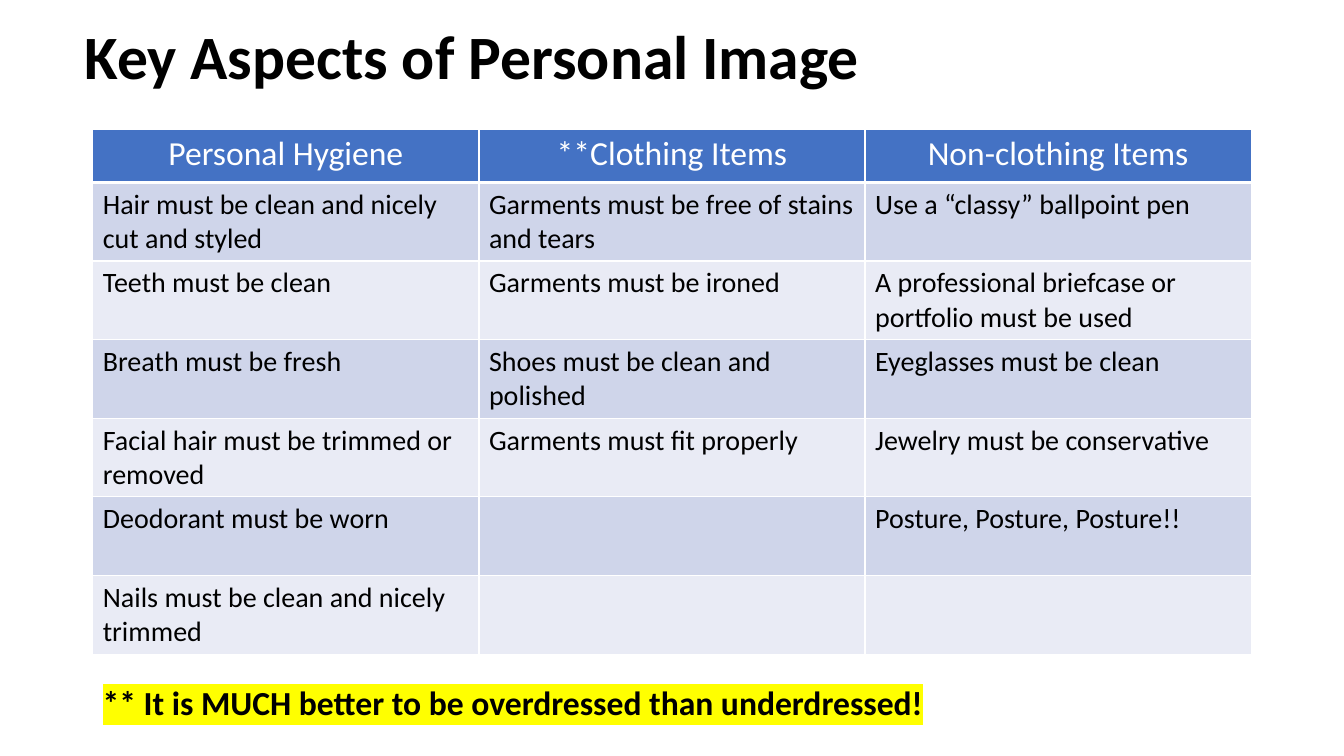
from dataclasses import dataclass

from lxml import etree
from pptx import Presentation
from pptx import util as u
from pptx.dml.color import RGBColor
from pptx.enum import text
from pptx.oxml import ns


@dataclass(frozen=True)
class Theme:
    font: str = "Calibri"
    ink: str = "000000"
    paper: str = "FFFFFF"
    header: str = "4472C4"
    bands: tuple = ("CFD5EA", "E9EBF5")
    marker: str = "FFFF00"
    title_size: int = 44
    heading_size: int = 24
    body_size: int = 20
    rule: int = 1
    header_rule: int = 3


THEME = Theme()
SLIDE_W, SLIDE_H = u.Inches(13.33), u.Inches(7.5)
MARGIN = u.Inches(0.92)
COLUMN_W = u.Inches(3.83)
HEADER_H, ROW_H = u.Inches(0.53), u.Inches(0.78)

ASPECTS = [
    ("Personal Hygiene", "**Clothing Items", "Non-clothing Items"),
    ("Hair must be clean and nicely cut and styled",
     "Garments must be free of stains and tears",
     "Use a “classy” ballpoint pen"),
    ("Teeth must be clean", "Garments must be ironed",
     "A professional briefcase or portfolio must be used"),
    ("Breath must be fresh", "Shoes must be clean and polished",
     "Eyeglasses must be clean"),
    ("Facial hair must be trimmed or removed", "Garments must fit properly",
     "Jewelry must be conservative"),
    ("Deodorant must be worn", "", "Posture, Posture, Posture!!"),
    ("Nails must be clean and nicely trimmed", "", ""),
]


def style(paragraph, size, color, bold=False):
    font = paragraph.font
    font.name, font.size, font.bold = THEME.font, u.Pt(size), bold
    font.color.rgb = RGBColor.from_string(color)


def add_solid(parent, tag, color):
    """Append a DrawingML element that wraps one RGB colour."""
    holder = etree.SubElement(parent, ns.qn(tag))
    etree.SubElement(holder, ns.qn("a:srgbClr"), val=color)


def add_line(slide, wording, box, size, anchor):
    """Add one bold line of text and return its paragraph."""
    frame = slide.shapes.add_textbox(*box).text_frame
    frame.word_wrap = True
    frame.vertical_anchor = anchor
    paragraph = frame.paragraphs[0]
    paragraph.text = wording
    style(paragraph, size, THEME.ink, bold=True)
    return paragraph


def highlight(paragraph):
    for run in paragraph.runs:
        add_solid(run._r.get_or_add_rPr(), "a:highlight", THEME.marker)


def set_borders(cell, row):
    """Draw white rules, with a heavier one below the header row."""
    widths = {"L": THEME.rule, "R": THEME.rule,
              "T": THEME.header_rule if row == 1 else THEME.rule,
              "B": THEME.header_rule if row == 0 else THEME.rule}
    properties = cell._tc.get_or_add_tcPr()
    for side, width in widths.items():
        rule = etree.SubElement(properties, ns.qn(f"a:ln{side}"), w=str(u.Pt(width)))
        add_solid(rule, "a:solidFill", THEME.paper)


def fill_cell(cell, wording, row):
    is_header = row == 0
    set_borders(cell, row)
    cell.fill.solid()
    cell.fill.fore_color.rgb = RGBColor.from_string(
        THEME.header if is_header else THEME.bands[(row - 1) % 2])
    cell.text = wording
    paragraph = cell.text_frame.paragraphs[0]
    if is_header:
        paragraph.alignment = text.PP_ALIGN.CENTER
        style(paragraph, THEME.heading_size, THEME.paper)
    else:
        style(paragraph, THEME.body_size, THEME.ink)


def add_aspects_table(slide):
    columns = len(ASPECTS[0])
    height = HEADER_H + ROW_H * (len(ASPECTS) - 1)
    table = slide.shapes.add_table(len(ASPECTS), columns, MARGIN, u.Inches(1.28),
                                   COLUMN_W * columns, height).table
    for column in table.columns:
        column.width = COLUMN_W
    for row, wordings in enumerate(ASPECTS):
        table.rows[row].height = ROW_H if row else HEADER_H
        for column, wording in enumerate(wordings):
            fill_cell(table.cell(row, column), wording, row)


def main():
    deck = Presentation()
    deck.slide_width, deck.slide_height = SLIDE_W, SLIDE_H
    slide = deck.slides.add_slide(deck.slide_layouts[6])

    title_box = [u.Inches(n) for n in (0.74, 0.13, 11.5, 0.93)]
    title = add_line(slide, "Key Aspects of Personal Image", title_box,
                     THEME.title_size, text.MSO_ANCHOR.MIDDLE)
    title.line_spacing = 0.9

    add_aspects_table(slide)

    advice_box = [MARGIN] + [u.Inches(n) for n in (6.72, 9.76, 0.5)]
    advice = add_line(slide, "** It is MUCH better to be overdressed than underdressed!",
                      advice_box, THEME.heading_size, text.MSO_ANCHOR.TOP)
    highlight(advice)

    deck.save("out.pptx")


if __name__ == "__main__":
    main()
